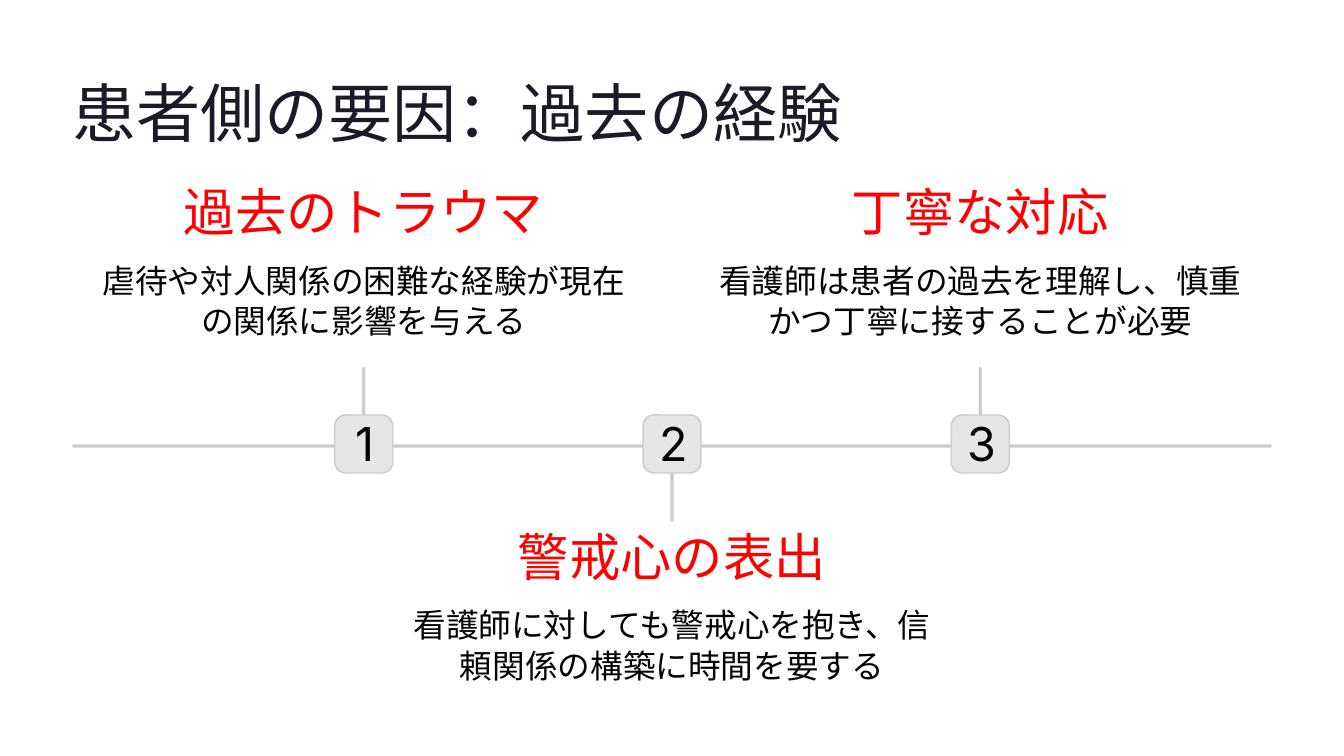
"""Build a three-step timeline slide about a patient's past experience."""
from dataclasses import dataclass

import pptx
import pptx.dml.color
import pptx.enum.shapes
import pptx.enum.text
import pptx.util

Inches = pptx.util.Inches
Pt = pptx.util.Pt
RGBColor = pptx.dml.color.RGBColor
Align = pptx.enum.text.PP_ALIGN

INK = RGBColor(0x1B, 0x1B, 0x27)
BLACK = RGBColor(0x03, 0x03, 0x03)
RED = RGBColor(0xFF, 0x00, 0x00)
RAIL = RGBColor(0xCC, 0xCC, 0xCC)
BADGE = RGBColor(0xE6, 0xE6, 0xE6)

CENTER = 8
PITCH = 3.67
RAIL_TOP = 5.29
THICK = 0.04
STEM = 0.92
BADGE_SIZE = 0.69


@dataclass
class Style:
    font: str
    size: float
    color: RGBColor
    leading: float
    align: Align = Align.CENTER
    wrap: bool = False


@dataclass
class Step:
    heading: str
    body: str
    above: bool


TITLE = Style("Inter", 55, INK, 68.5, Align.LEFT)
NUMBER = Style("Inter", 40, BLACK, 33)
HEADING = Style("Inter", 44, RED, 34)
BODY = Style("Roboto", 28, BLACK, 35, wrap=True)

STEPS = [
    Step("過去のトラウマ", "虐待や対人関係の困難な経験が現在の関係に影響を与える", True),
    Step("警戒心の表出", "看護師に対しても警戒心を抱き、信頼関係の構築に時間を要する", False),
    Step("丁寧な対応", "看護師は患者の過去を理解し、慎重かつ丁寧に接することが必要", True),
]


def set_all(obj, values: dict) -> None:
    for name, value in values.items():
        setattr(obj, name, value)


def write(sp, text: str, style: Style) -> None:
    tf = sp.text_frame
    set_all(tf, {
        "margin_left": 0, "margin_top": 0, "margin_right": 0, "margin_bottom": 0,
        "vertical_anchor": pptx.enum.text.MSO_ANCHOR.TOP,
        "auto_size": pptx.enum.text.MSO_AUTO_SIZE.NONE,
        "word_wrap": style.wrap,
    })
    p = tf.paragraphs[0]
    set_all(p, {"alignment": style.align, "line_spacing": Pt(style.leading)})
    r = p.add_run()
    r.text = text
    set_all(r.font, {"name": style.font, "size": Pt(style.size)})
    r.font.color.rgb = style.color


def add_text(slide, cx: float, top: float, width: float, height: float,
             text: str, style: Style) -> None:
    sp = slide.shapes.add_textbox(
        Inches(cx - width / 2), Inches(top), Inches(width), Inches(height))
    write(sp, text, style)


def add_bar(slide, cx: float, top: float, width: float, height: float,
            fill: RGBColor = RAIL, radius: float = 0.5, outlined: bool = False) -> None:
    sp = slide.shapes.add_shape(
        pptx.enum.shapes.MSO_SHAPE.ROUNDED_RECTANGLE,
        Inches(cx - width / 2), Inches(top), Inches(width), Inches(height))
    sp.adjustments[0] = radius
    sp.shadow.inherit = False
    sp.fill.solid()
    sp.fill.fore_color.rgb = fill
    if outlined:
        sp.line.color.rgb = RAIL
        sp.line.width = Pt(1.2)
    else:
        sp.line.fill.background()


def add_step(slide, number: int, step: Step) -> None:
    cx = CENTER + (number - 2) * PITCH
    stem_top = RAIL_TOP - STEM if step.above else RAIL_TOP
    text_top = 2.41 if step.above else 6.51
    add_bar(slide, cx, stem_top, THICK, STEM)
    add_bar(slide, cx, 4.94, BADGE_SIZE, BADGE_SIZE, BADGE, 0.187, True)
    add_text(slide, cx + 0.02, 5.15, 0.46, 0.57, str(number), NUMBER)
    add_text(slide, cx, text_top, 3.83, 0.48, step.heading, HEADING)
    add_text(slide, cx, text_top + 0.67, 6.34, 0.98, step.body, BODY)


def main() -> None:
    prs = pptx.Presentation()
    set_all(prs, {"slide_width": Inches(16), "slide_height": Inches(9)})
    slide = prs.slides.add_slide(prs.slide_layouts[5])
    title = slide.shapes.title
    set_all(title, {"left": Inches(0.86), "top": Inches(0.84),
                    "width": Inches(9.2), "height": Inches(0.96)})
    write(title, "患者側の要因：過去の経験", TITLE)
    add_bar(slide, CENTER, RAIL_TOP, 14.28, THICK)
    for number, step in enumerate(STEPS, 1):
        add_step(slide, number, step)
    prs.save("out.pptx")


if __name__ == "__main__":
    main()
